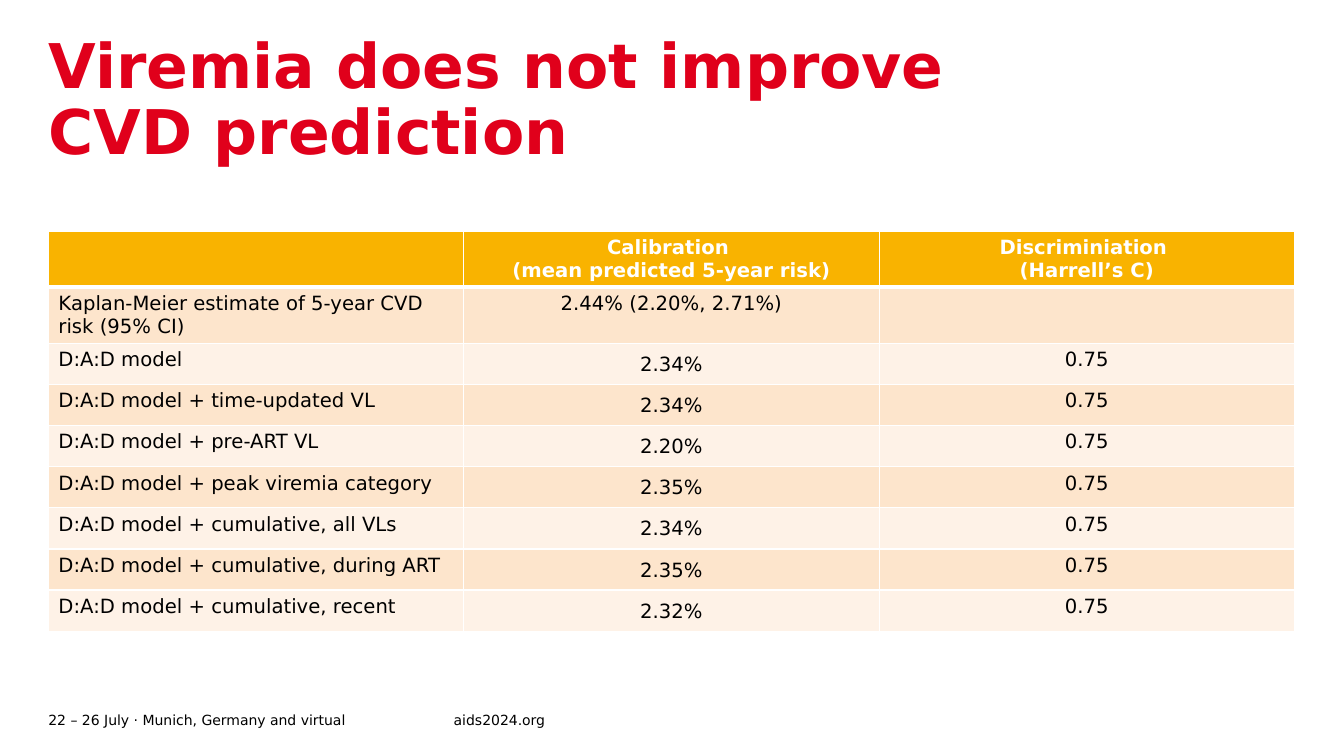
from dataclasses import dataclass

from lxml import etree
from pptx import Presentation
from pptx.dml.color import RGBColor
from pptx.enum.text import MSO_ANCHOR, MSO_AUTO_SIZE, PP_ALIGN
from pptx.oxml.ns import qn
from pptx.util import Inches, Pt

LEFT, CENTER = PP_ALIGN.LEFT, PP_ALIGN.CENTER
TOP, MIDDLE = MSO_ANCHOR.TOP, MSO_ANCHOR.MIDDLE
NO_FIT = MSO_AUTO_SIZE.NONE
TITLE_ONLY = 5
UNIT = 0.12


@dataclass(frozen=True)
class Theme:
    font: str = "DejaVu Sans"
    red: str = "E0001B"
    amber: str = "F9B300"
    bands: tuple = ("FDE5CC", "FEF2E7")
    white: str = "FFFFFF"
    black: str = "000000"
    title_size: int = 44
    table_size: int = 14
    footer_size: int = 10
    rule: int = 1
    header_rule: int = 3


THEME = Theme()

HEADERS = ["", "Calibration \n(mean predicted 5-year risk)", "Discriminiation \n(Harrell’s C)"]
ESTIMATE = ["Kaplan-Meier estimate of 5-year CVD risk (95% CI)", "2.44% (2.20%, 2.71%)", ""]
MODELS = [
    ["D:A:D model", "2.34%", "0.75"],
    ["D:A:D model + time-updated VL", "2.34%", "0.75"],
    ["D:A:D model + pre-ART VL", "2.20%", "0.75"],
    ["D:A:D model + peak viremia category", "2.35%", "0.75"],
    ["D:A:D model + cumulative, all VLs", "2.34%", "0.75"],
    ["D:A:D model + cumulative, during ART", "2.35%", "0.75"],
    ["D:A:D model + cumulative, recent", "2.32%", "0.75"],
]


def grid(count):
    return Inches(count * UNIT)


def write(frame, text, *, size, color=THEME.black, bold=False, align=LEFT,
          anchor=TOP, spacing=None, after=None):
    frame.word_wrap = True
    frame.vertical_anchor = anchor
    para = frame.paragraphs[0]
    para.alignment = align
    if spacing:
        para.line_spacing = spacing
    if after:
        para.space_after = Pt(after)
    for index, line in enumerate(text.split("\n")):
        if index:
            para.add_line_break()
        span = para.add_run()
        span.text = line
        span.font.name = THEME.font
        span.font.size = Pt(size)
        span.font.bold = bold
        span.font.color.rgb = RGBColor.from_string(color)


class SlideBuilder:
    def __init__(self, page, theme):
        self.page = page
        self.theme = theme

    def clear_insets(self, frame):
        frame.auto_size = NO_FIT
        frame.margin_left = frame.margin_right = 0
        frame.margin_top = frame.margin_bottom = 0

    def title(self, text, column, row, columns, rows):
        box = self.page.shapes.title
        box.left, box.top = grid(column), grid(row)
        box.width, box.height = grid(columns), grid(rows)
        self.clear_insets(box.text_frame)
        write(box.text_frame, text, size=self.theme.title_size,
              color=self.theme.red, bold=True, spacing=0.9)

    def footer(self, text, column, row, columns, rows):
        box = self.page.shapes.add_textbox(grid(column), grid(row), grid(columns), grid(rows))
        self.clear_insets(box.text_frame)
        write(box.text_frame, text, size=self.theme.footer_size, anchor=MIDDLE)

    def style_cell(self, cell, fill, bottom, top):
        properties = cell._tc.get_or_add_tcPr()
        widths = {"a:lnL": self.theme.rule, "a:lnR": self.theme.rule, "a:lnT": top, "a:lnB": bottom}
        for tag, width in widths.items():
            line = etree.SubElement(properties, qn(tag), w=str(Pt(width)))
            solid = etree.SubElement(line, qn("a:solidFill"))
            etree.SubElement(solid, qn("a:srgbClr"), val=self.theme.white)
        cell.fill.solid()
        cell.fill.fore_color.rgb = RGBColor.from_string(fill)

    def cell_format(self, row, column):
        if row == 0:
            return dict(align=CENTER, anchor=MIDDLE, color=self.theme.white, bold=True)
        if column == 0:
            return {}
        if column == 1 and row > 1:
            return dict(align=CENTER, anchor=MIDDLE, spacing=1.07, after=8)
        return dict(align=CENTER)

    def table(self, records, column, row, columns, row_height):
        frame = self.page.shapes.add_table(
            len(records), len(records[0]), grid(column), grid(row),
            grid(columns), grid(row_height * len(records)))
        table = frame.table
        table.horz_banding = False
        for table_row in table.rows:
            table_row.height = grid(row_height)
        for r, record in enumerate(records):
            fill = self.theme.bands[(r - 1) % 2] if r else self.theme.amber
            bottom = self.theme.header_rule if r == 0 else self.theme.rule
            top = self.theme.header_rule if r == 1 else self.theme.rule
            for c, text in enumerate(record):
                cell = table.cell(r, c)
                self.style_cell(cell, fill, bottom, top)
                if c == 1 and r > 1:
                    cell.margin_left = cell.margin_right = Inches(0.07)
                    cell.margin_top = cell.margin_bottom = 0
                if text:
                    write(cell.text_frame, text, size=self.theme.table_size,
                          **self.cell_format(r, c))
                    cell.vertical_anchor = self.cell_format(r, c).get("anchor", TOP)


def main():
    deck = Presentation()
    deck.slide_width, deck.slide_height = Inches(13.33), Inches(7.5)
    page = deck.slides.add_slide(deck.slide_layouts[TITLE_ONLY])
    builder = SlideBuilder(page, THEME)
    builder.footer("22 – 26 July · Munich, Germany and virtual", 4, 58.5, 33.5, 2)
    builder.footer("aids2024.org", 37.5, 58.5, 16, 2)
    builder.title("Viremia does not improve CVD prediction", 4, 2.9, 81, 11.2)
    builder.table([HEADERS, ESTIMATE, *MODELS], 4, 19.1, 103, 3.4)
    deck.save("out.pptx")


if __name__ == "__main__":
    main()
